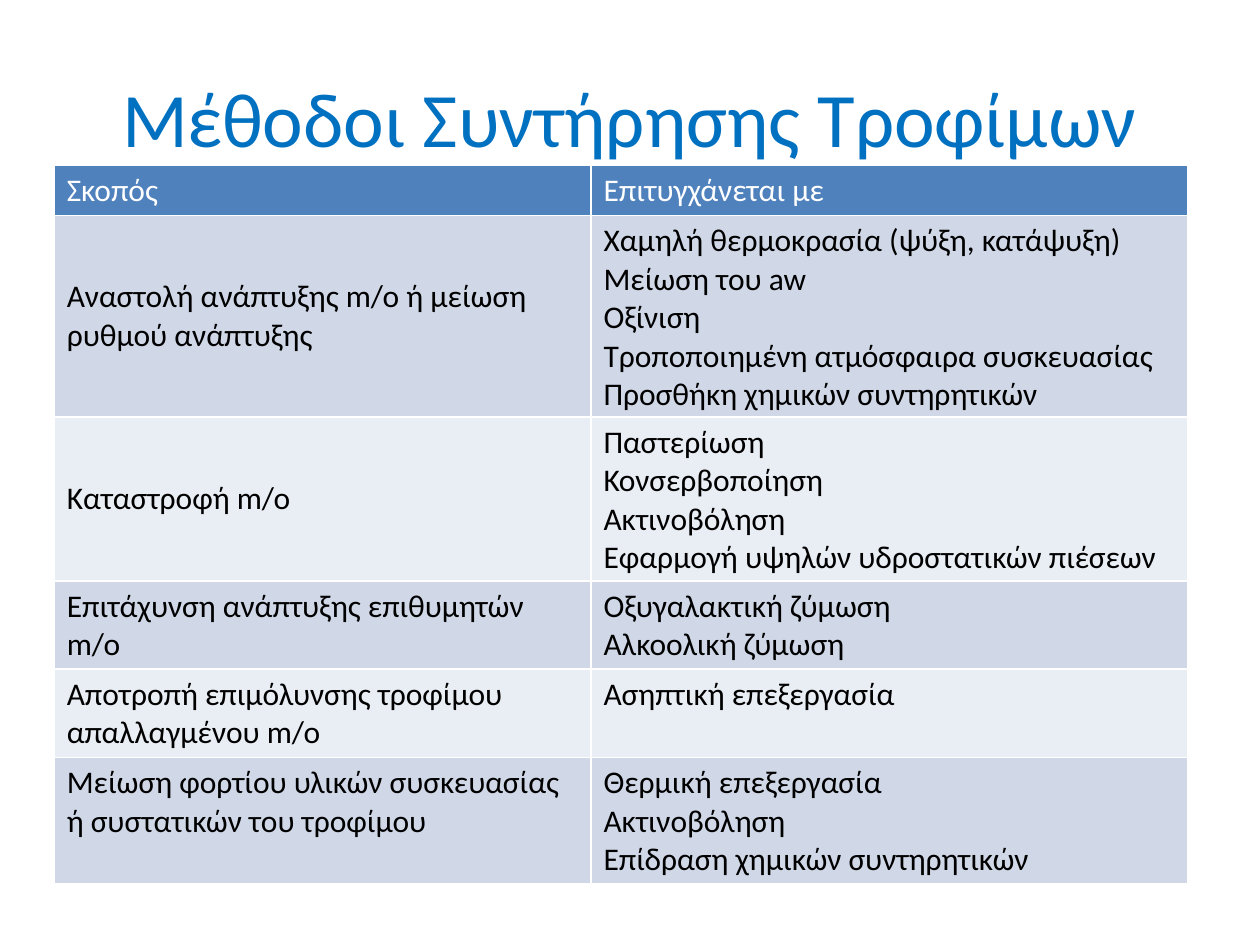
from dataclasses import dataclass

from pptx import Presentation
from pptx import util as u
from pptx.dml.color import RGBColor
from pptx.enum import text


@dataclass(frozen=True)
class Theme:
    font: str = "Calibri"
    title_size: int = 44
    body_size: int = 18
    title: str = "0070C0"
    header: str = "4F81BD"
    header_text: str = "FFFFFF"
    body_text: str = "000000"
    bands: tuple = ("D0D8E8", "E9EDF4")


THEME = Theme()
WIDTH, HEIGHT = u.Inches(10), u.Inches(7.5)
COLUMNS = (4.26, 4.74)
LINE, PADDING = 0.29, 0.1
MIDDLE, TOP = text.MSO_ANCHOR.MIDDLE, text.MSO_ANCHOR.TOP

HEADER = ("Σκοπός", "Επιτυγχάνεται με")
METHODS = [
    ("Αναστολή ανάπτυξης m/o ή μείωση ρυθμού ανάπτυξης", MIDDLE, 5,
     ["Χαμηλή θερμοκρασία (ψύξη, κατάψυξη)", "Μείωση του aw", "Οξίνιση",
      "Τροποποιημένη ατμόσφαιρα συσκευασίας", "Προσθήκη χημικών συντηρητικών"]),
    ("Καταστροφή m/o", MIDDLE, 4,
     ["Παστερίωση", "Κονσερβοποίηση", "Ακτινοβόληση",
      "Εφαρμογή υψηλών υδροστατικών πιέσεων"]),
    ("Επιτάχυνση ανάπτυξης επιθυμητών m/o", TOP, 2,
     ["Οξυγαλακτική ζύμωση", "Αλκοολική ζύμωση"]),
    ("Αποτροπή επιμόλυνσης τροφίμου απαλλαγμένου m/o", TOP, 2,
     ["Ασηπτική επεξεργασία"]),
    ("Μείωση φορτίου υλικών συσκευασίας ή συστατικών του τροφίμου", TOP, 3,
     ["Θερμική επεξεργασία", "Ακτινοβόληση", "Επίδραση χημικών συντηρητικών"]),
]


def write(tf, lines, size, color):
    tf.text = "\n".join(lines)
    for p in tf.paragraphs:
        p.font.name = THEME.font
        p.font.size = u.Pt(size)
        p.font.bold = False
        p.font.color.rgb = RGBColor.from_string(color)


def add_title(s, title):
    sp = s.shapes.add_textbox(int(WIDTH * 0.05), int(HEIGHT * 0.04),
                              int(WIDTH * 0.9), u.Inches(1.25))
    tf = sp.text_frame
    tf.word_wrap = True
    tf.vertical_anchor = MIDDLE
    write(tf, [title], THEME.title_size, THEME.title)
    tf.paragraphs[0].alignment = text.PP_ALIGN.CENTER


def fill_cell(cell, lines, fill, color, anchor=TOP):
    cell.fill.solid()
    cell.fill.fore_color.rgb = RGBColor.from_string(fill)
    cell.vertical_anchor = anchor
    write(cell.text_frame, lines, THEME.body_size, color)


def add_methods_table(s):
    line_counts = [1] + [count for _, _, count, _ in METHODS]
    heights = [u.Inches(PADDING + LINE * n) for n in line_counts]
    table = s.shapes.add_table(len(heights), len(COLUMNS), u.Inches(0.43),
                               u.Inches(1.31), u.Inches(sum(COLUMNS)),
                               sum(heights)).table
    for column, width in zip(table.columns, COLUMNS):
        column.width = u.Inches(width)
    for row, height in zip(table.rows, heights):
        row.height = height
    for c, label in enumerate(HEADER):
        fill_cell(table.cell(0, c), [label], THEME.header, THEME.header_text)
    for r, (purpose, anchor, _, means) in enumerate(METHODS, 1):
        band = THEME.bands[(r - 1) % 2]
        fill_cell(table.cell(r, 0), [purpose], band, THEME.body_text, anchor)
        fill_cell(table.cell(r, 1), means, band, THEME.body_text)


def main():
    prs = Presentation()
    prs.slide_width, prs.slide_height = WIDTH, HEIGHT
    s = prs.slides.add_slide(prs.slide_layouts[6])
    add_title(s, "Μέθοδοι Συντήρησης Τροφίμων")
    add_methods_table(s)
    prs.save("out.pptx")


if __name__ == "__main__":
    main()
